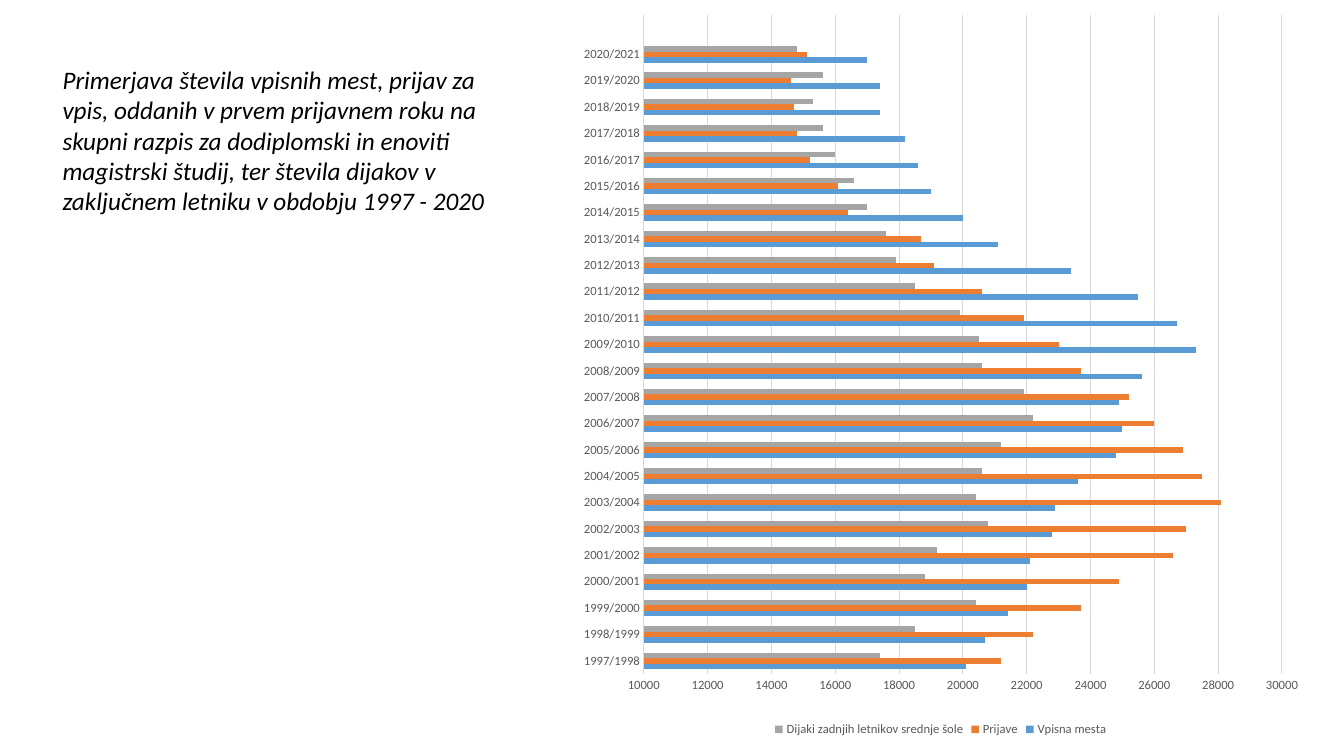
import pptx
import pptx.chart.data
import pptx.dml.color
import pptx.enum.chart
import pptx.enum.text
import pptx.util
from lxml import etree
from pptx.util import Inches

FONT = "Calibri"
GREY_TEXT = "595959"
GREY_LINE = "D9D9D9"
HEADING = (
    "Primerjava števila vpisnih mest, prijav za vpis, oddanih v prvem prijavnem roku "
    "na skupni razpis za dodiplomski in enoviti magistrski študij, ter števila dijakov "
    "v zaključnem letniku v obdobju 1997 - 2020"
)
SCHOOL_YEARS = [f"{year}/{year + 1}" for year in range(1997, 2021)]
ENROLMENT = [
    ("Vpisna mesta", "5B9BD5", [
        20100, 20700, 21400, 22000, 22100, 22800, 22900, 23600, 24800, 25000, 24900, 25600,
        27300, 26700, 25500, 23400, 21100, 20000, 19000, 18600, 18200, 17400, 17400, 17000]),
    ("Prijave", "ED7D31", [
        21200, 22200, 23700, 24900, 26600, 27000, 28100, 27500, 26900, 26000, 25200, 23700,
        23000, 21900, 20600, 19100, 18700, 16400, 16100, 15200, 14800, 14700, 14600, 15100]),
    ("Dijaki zadnjih letnikov srednje šole", "A5A5A5", [
        17400, 18500, 20400, 18800, 19200, 20800, 20400, 20600, 21200, 22200, 21900, 20600,
        20500, 19900, 18500, 17900, 17600, 17000, 16600, 16000, 15600, 15300, 15600, 14800]),
]


def rgb(hex_colour):
    return pptx.dml.color.RGBColor.from_string(hex_colour)


def set_font(font, size, colour):
    font.name = FONT
    font.size = pptx.util.Pt(size)
    font.color.rgb = rgb(colour)


def set_line(line, colour):
    line.color.rgb = rgb(colour)
    line.width = pptx.util.Pt(0.75)


def write_heading(heading):
    heading.left, heading.top = Inches(0.52), Inches(0.59)
    heading.width, heading.height = Inches(4.4), Inches(1.62)
    frame = heading.text_frame
    frame.text = HEADING
    frame.word_wrap = True
    frame.auto_size = pptx.enum.text.MSO_AUTO_SIZE.NONE
    frame.vertical_anchor = pptx.enum.text.MSO_ANCHOR.TOP
    paragraph = frame.paragraphs[0]
    paragraph.alignment = pptx.enum.text.PP_ALIGN.LEFT
    set_font(paragraph.font, 18, "000000")
    paragraph.font.italic = True


def place_plot(chart, **fractions):
    """Fix the inner plot area, in fractions of the chart."""
    plot_area = chart._chartSpace.chart.plotArea
    namespace = etree.QName(plot_area).namespace
    for old_layout in plot_area.findall(f"{{{namespace}}}layout"):
        plot_area.remove(old_layout)
    layout = etree.Element(f"{{{namespace}}}layout")
    manual = etree.SubElement(layout, f"{{{namespace}}}manualLayout")
    settings = {"layoutTarget": "inner", "xMode": "edge", "yMode": "edge", **fractions}
    for tag, value in settings.items():
        etree.SubElement(manual, f"{{{namespace}}}{tag}").set("val", str(value))
    plot_area.insert(0, layout)


def format_axes(chart):
    years, counts = chart.category_axis, chart.value_axis
    for axis in (years, counts):
        axis.major_tick_mark = pptx.enum.chart.XL_TICK_MARK.NONE
        axis.minor_tick_mark = pptx.enum.chart.XL_TICK_MARK.NONE
        set_font(axis.tick_labels.font, 9, GREY_TEXT)
    set_line(years.format.line, GREY_LINE)
    counts.format.line.fill.background()
    counts.minimum_scale, counts.maximum_scale = 10000, 30000
    counts.major_unit = 2000
    counts.has_major_gridlines = True
    set_line(counts.major_gridlines.format.line, GREY_LINE)


def add_enrolment_chart(slide):
    # The unnamed last category keeps a free row above the latest year.
    data = pptx.chart.data.CategoryChartData(number_format="General")
    data.categories = SCHOOL_YEARS + [""]
    for name, _, counts in ENROLMENT:
        data.add_series(name, counts + [None])
    chart = slide.shapes.add_chart(
        pptx.enum.chart.XL_CHART_TYPE.BAR_CLUSTERED,
        Inches(5.65), Inches(0), Inches(7.36), Inches(7.35), data).chart
    set_font(chart.font, 10, "000000")
    chart.has_title = False
    chart.has_legend = True
    chart.legend.position = pptx.enum.chart.XL_LEGEND_POSITION.BOTTOM
    chart.legend.include_in_layout = False
    set_font(chart.legend.font, 9, GREY_TEXT)
    bars = chart.plots[0]
    bars.gap_width = 182
    bars.overlap = 0
    bars.vary_by_categories = False
    for series, (_, colour, _) in zip(bars.series, ENROLMENT):
        series.format.fill.solid()
        series.format.fill.fore_color.rgb = rgb(colour)
    format_axes(chart)
    place_plot(chart, x=0.1, y=0.02, w=0.86, h=0.89)


def main():
    deck = pptx.Presentation()
    deck.slide_width, deck.slide_height = Inches(13.33), Inches(7.5)
    slide = deck.slides.add_slide(deck.slide_layouts.get_by_name("Title Only"))
    add_enrolment_chart(slide)
    write_heading(slide.shapes.title)
    deck.save("out.pptx")


if __name__ == "__main__":
    main()
